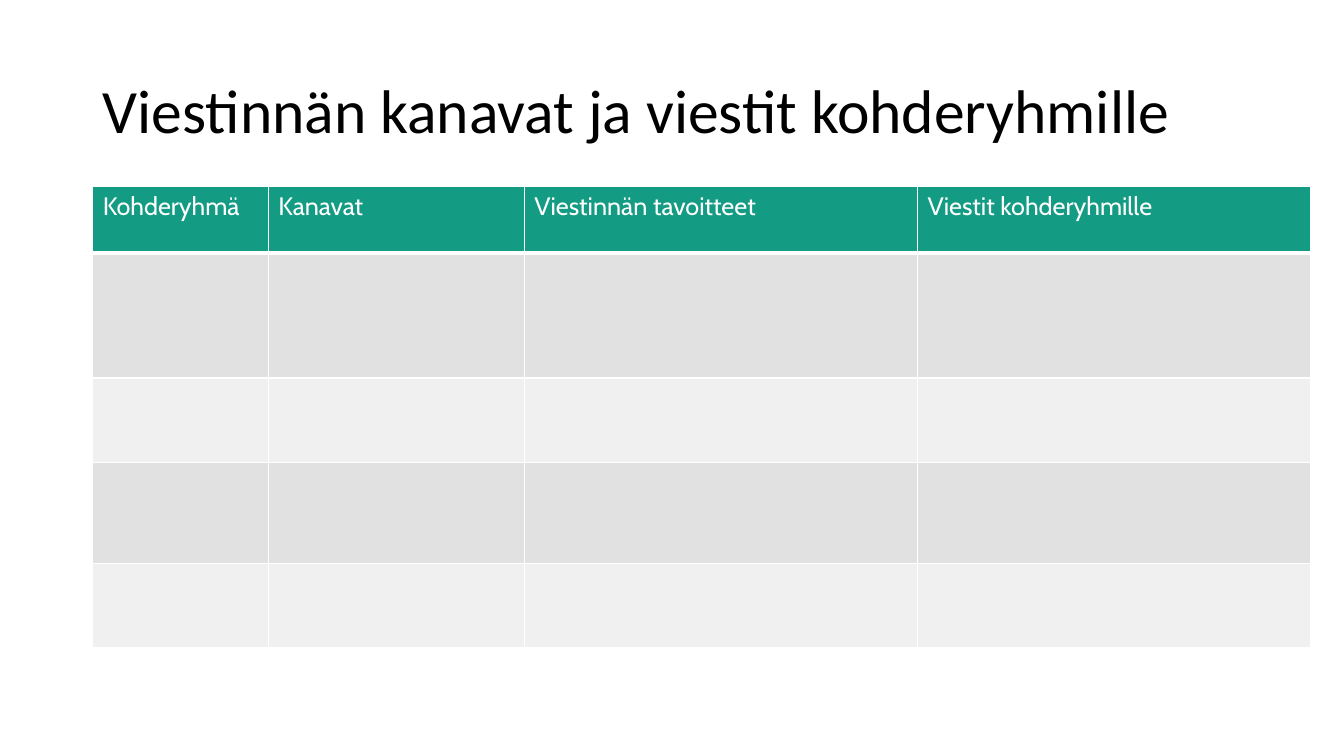
import pptx
import pptx.dml.color
import pptx.enum.text
import pptx.oxml
import pptx.oxml.ns
import pptx.util
from pptx.util import Inches

BLACK = pptx.dml.color.RGBColor(0x00, 0x00, 0x00)
WHITE = pptx.dml.color.RGBColor(0xFF, 0xFF, 0xFF)
GREEN = pptx.dml.color.RGBColor(0x13, 0x9B, 0x84)
DARK_BAND = pptx.dml.color.RGBColor(0xE1, 0xE1, 0xE1)
LIGHT_BAND = pptx.dml.color.RGBColor(0xF0, 0xF0, 0xF0)

HEADINGS = ["Kohderyhmä", "Kanavat", "Viestinnän tavoitteet", "Viestit kohderyhmille"]
COLUMN_WIDTHS = [1.74, 2.54, 3.9, 3.9]
ROW_HEIGHTS = [0.66, 1.24, 0.84, 1, 0.84]
LEFT = Inches(0.92)


def set_font(paragraph, name, size, color):
    paragraph.font.name = name
    paragraph.font.size = pptx.util.Pt(size)
    paragraph.font.color.rgb = color
    paragraph.font.bold = False


def add_title(slide, text):
    title = slide.shapes.add_textbox(LEFT, Inches(0.4), Inches(11.5), Inches(1.45))
    frame = title.text_frame
    frame.word_wrap = True
    frame.vertical_anchor = pptx.enum.text.MSO_ANCHOR.MIDDLE
    paragraph = frame.paragraphs[0]
    paragraph.text = text
    paragraph.line_spacing = 0.9
    set_font(paragraph, "Calibri", 44, BLACK)


def add_borders(cell, bottom_width):
    """Draw white cell borders; call before the cell is filled."""
    properties = cell._tc.get_or_add_tcPr()
    for side, width in (("L", 1), ("R", 1), ("T", 1), ("B", bottom_width)):
        properties.append(pptx.oxml.parse_xml(
            f'<a:ln{side} {pptx.oxml.ns.nsdecls("a")} w="{pptx.util.Pt(width)}">'
            f'<a:solidFill><a:srgbClr val="{WHITE}"/></a:solidFill></a:ln{side}>'))


def style_cell(cell, color, bottom_width):
    add_borders(cell, bottom_width)
    cell.fill.solid()
    cell.fill.fore_color.rgb = color


def add_audience_table(slide):
    table = slide.shapes.add_table(
        len(ROW_HEIGHTS), len(COLUMN_WIDTHS), LEFT, Inches(1.85),
        Inches(sum(COLUMN_WIDTHS)), Inches(sum(ROW_HEIGHTS))).table
    for column, width in zip(table.columns, COLUMN_WIDTHS):
        column.width = Inches(width)
    for index, (row, height) in enumerate(zip(table.rows, ROW_HEIGHTS)):
        row.height = Inches(height)
        band = DARK_BAND if index % 2 else LIGHT_BAND
        for cell in row.cells:
            if index == 0:
                style_cell(cell, GREEN, 3)
            else:
                style_cell(cell, band, 1)
    for cell, heading in zip(table.rows[0].cells, HEADINGS):
        cell.text = heading
        set_font(cell.text_frame.paragraphs[0], "Cabin", 18, WHITE)


def main():
    presentation = pptx.Presentation()
    presentation.slide_width = Inches(13.33)
    presentation.slide_height = Inches(7.5)
    slide = presentation.slides.add_slide(presentation.slide_layouts[6])
    add_title(slide, "Viestinnän kanavat ja viestit kohderyhmille")
    add_audience_table(slide)
    presentation.save("out.pptx")


if __name__ == "__main__":
    main()
